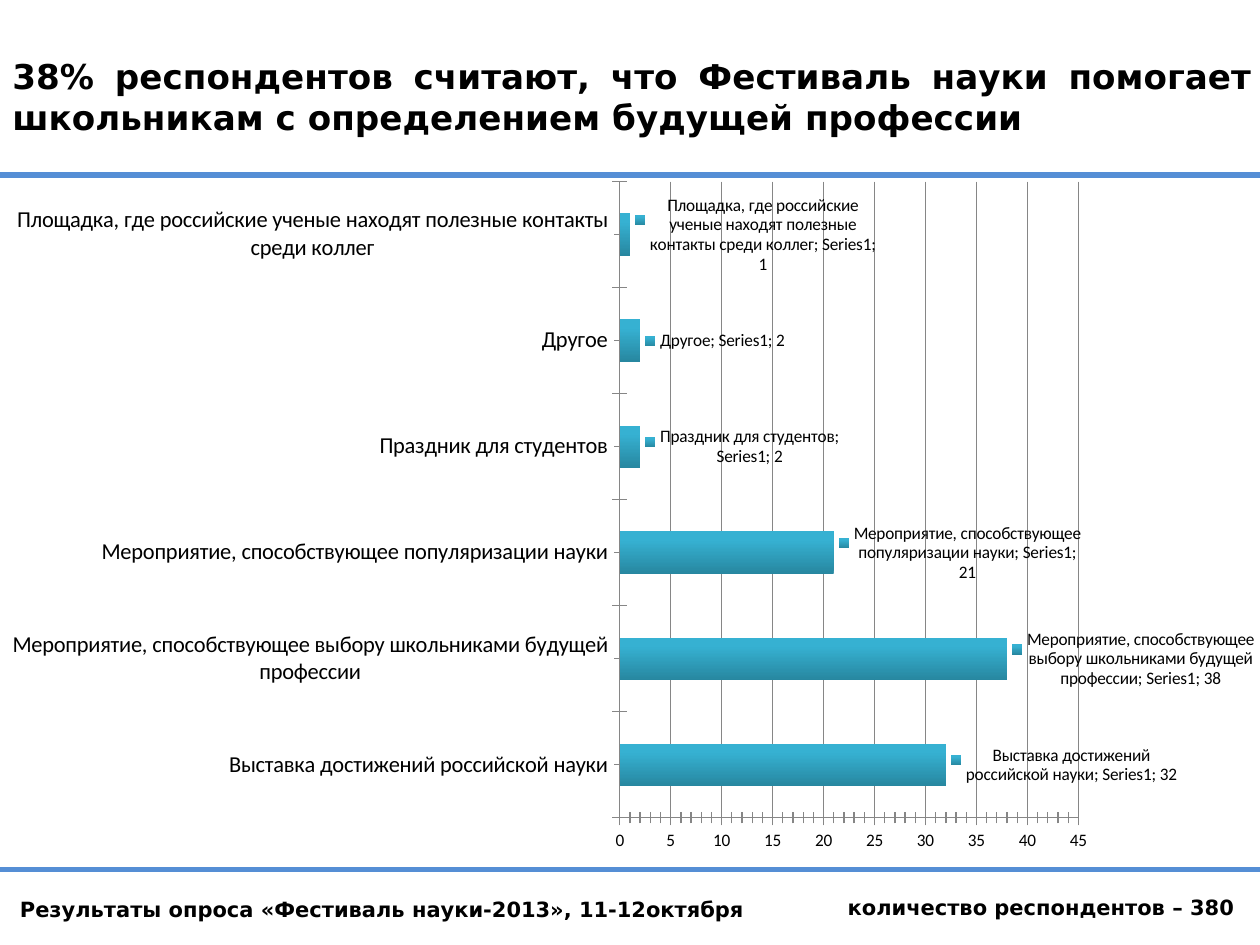
from lxml.etree import SubElement
from pptx import Presentation
from pptx.chart.data import CategoryChartData
from pptx.dml.color import RGBColor
from pptx.enum.chart import XL_CHART_TYPE, XL_LABEL_POSITION, XL_TICK_MARK
from pptx.enum.shapes import MSO_CONNECTOR
from pptx.enum.text import MSO_ANCHOR, MSO_AUTO_SIZE, PP_ALIGN
from pptx.oxml import parse_xml
from pptx.oxml.ns import nsdecls, qn
from pptx.util import Pt


def color(value):
    return RGBColor.from_string(value)


class SlideBuilder:
    text_font = "DejaVu Sans"
    chart_font = "Calibri"
    ink = "000000"
    rule_color = "558ED5"
    grid_color = "868686"
    bar_stops = ((0, "2787A0"), (0.8, "36B1D2"))

    def __init__(self, slide):
        self.slide = slide

    def rule(self, top):
        connector = self.slide.shapes.add_connector(
            MSO_CONNECTOR.STRAIGHT, Pt(0), Pt(top), Pt(720), Pt(top))
        connector.line.color.rgb = color(self.rule_color)
        connector.line.width = Pt(3)
        SubElement(connector._element.spPr, qn("a:effectLst"))

    def text(self, content, left, top, width, height, size, inset=7.2,
             align=PP_ALIGN.LEFT, anchor=MSO_ANCHOR.TOP, auto_size=MSO_AUTO_SIZE.NONE):
        shape = self.slide.shapes.add_textbox(Pt(left), Pt(top), Pt(width), Pt(height))
        text_frame = shape.text_frame
        text_frame.text = content
        text_frame.word_wrap = True
        text_frame.auto_size = auto_size
        text_frame.vertical_anchor = anchor
        text_frame.margin_left = Pt(inset)
        paragraph = text_frame.paragraphs[0]
        paragraph.alignment = align
        font = paragraph.runs[0].font
        font.name = self.text_font
        font.size = Pt(size)
        font.bold = True
        font.color.rgb = color(self.ink)

    def style_axis(self, axis, size, minor_tick):
        axis.major_tick_mark = XL_TICK_MARK.CROSS
        axis.minor_tick_mark = minor_tick
        axis.format.line.color.rgb = color(self.grid_color)
        axis.format.line.width = Pt(0.75)
        axis.tick_labels.font.size = Pt(size)

    def bar_chart(self, answers, left, top, width, height, plot_box):
        chart_data = CategoryChartData(number_format="0")
        chart_data.categories = [name for name, _ in answers]
        chart_data.add_series("Series1", [share for _, share in answers])
        chart = self.slide.shapes.add_chart(
            XL_CHART_TYPE.BAR_CLUSTERED, Pt(left), Pt(top), Pt(width), Pt(height),
            chart_data).chart
        chart.has_title = False
        chart.has_legend = False
        chart.font.name = self.chart_font
        chart.font.size = Pt(10)
        chart.font.color.rgb = color(self.ink)

        self.style_axis(chart.category_axis, 13, XL_TICK_MARK.CROSS)
        value_axis = chart.value_axis
        self.style_axis(value_axis, 10, XL_TICK_MARK.CROSS)
        value_axis.minimum_scale, value_axis.maximum_scale = 0, 45
        value_axis.major_unit, value_axis.minor_unit = 5, 1
        value_axis.has_major_gridlines = True
        value_axis.major_gridlines.format.line.color.rgb = color(self.grid_color)
        value_axis.major_gridlines.format.line.width = Pt(0.75)

        plot = chart.plots[0]
        plot.gap_width = 150
        plot.vary_by_categories = False
        fill = plot.series[0].format.fill
        fill.gradient()
        fill.gradient_angle = 90
        for stop, (position, shade) in zip(fill.gradient_stops, self.bar_stops):
            stop.position = position
            stop.color.rgb = color(shade)

        self.label_bars(plot)
        self.place_plot(chart, plot_box)

    def label_bars(self, plot):
        labels = plot.series[0].data_labels
        labels.show_legend_key = True
        labels.show_value = True
        labels.show_category_name = True
        labels.show_series_name = True
        labels.number_format = "0"
        labels.number_format_is_linked = False
        labels.position = XL_LABEL_POSITION.OUTSIDE_END
        labels.font.size = Pt(10)
        separator = parse_xml(f'<c:separator {nsdecls("c")}>; </c:separator>')
        labels._element.find(qn("c:showBubbleSize")).addnext(separator)

    def place_plot(self, chart, plot_box):
        plot_area = chart._chartSpace.chart.plotArea
        for old_layout in plot_area.findall(qn("c:layout")):
            plot_area.remove(old_layout)
        layout = parse_xml(f'<c:layout {nsdecls("c")}><c:manualLayout/></c:layout>')
        settings = [("layoutTarget", "inner"), ("xMode", "edge"), ("yMode", "edge")]
        settings += zip("xywh", plot_box)
        for tag, value in settings:
            SubElement(layout[0], qn(f"c:{tag}")).set("val", str(value))
        plot_area.insert(0, layout)


def main():
    presentation = Presentation()
    presentation.slide_width, presentation.slide_height = Pt(720), Pt(540)
    builder = SlideBuilder(presentation.slides.add_slide(presentation.slide_layouts[6]))

    for top in (100, 497):
        builder.rule(top)

    footers = (
        ("Результаты опроса «Фестиваль науки-2013», 11-12октября", 0, 509, 462),
        ("количество респондентов – 380", 473, 507.6, 247),
    )
    for content, left, top, width in footers:
        builder.text(content, left, top, width, 21.6, 12, inset=11.4,
                     auto_size=MSO_AUTO_SIZE.SHAPE_TO_FIT_TEXT)

    builder.text(
        "38% респондентов считают, что Фестиваль науки помогает школьникам "
        "с определением будущей профессии",
        0, 10, 723, 90, 19.5, align=PP_ALIGN.JUSTIFY, anchor=MSO_ANCHOR.MIDDLE)

    answers = (
        ("Выставка достижений российской науки", 32),
        ("Мероприятие, способствующее выбору школьниками будущей профессии", 38),
        ("Мероприятие, способствующее популяризации науки", 21),
        ("Праздник для студентов", 2),
        ("Другое", 2),
        ("Площадка, где российские ученые находят полезные контакты среди коллег", 1),
    )
    builder.bar_chart(answers, 0, 95.8, 720, 399.6, (0.5, 0.02, 0.37, 0.91))

    presentation.save("out.pptx")


if __name__ == "__main__":
    main()
